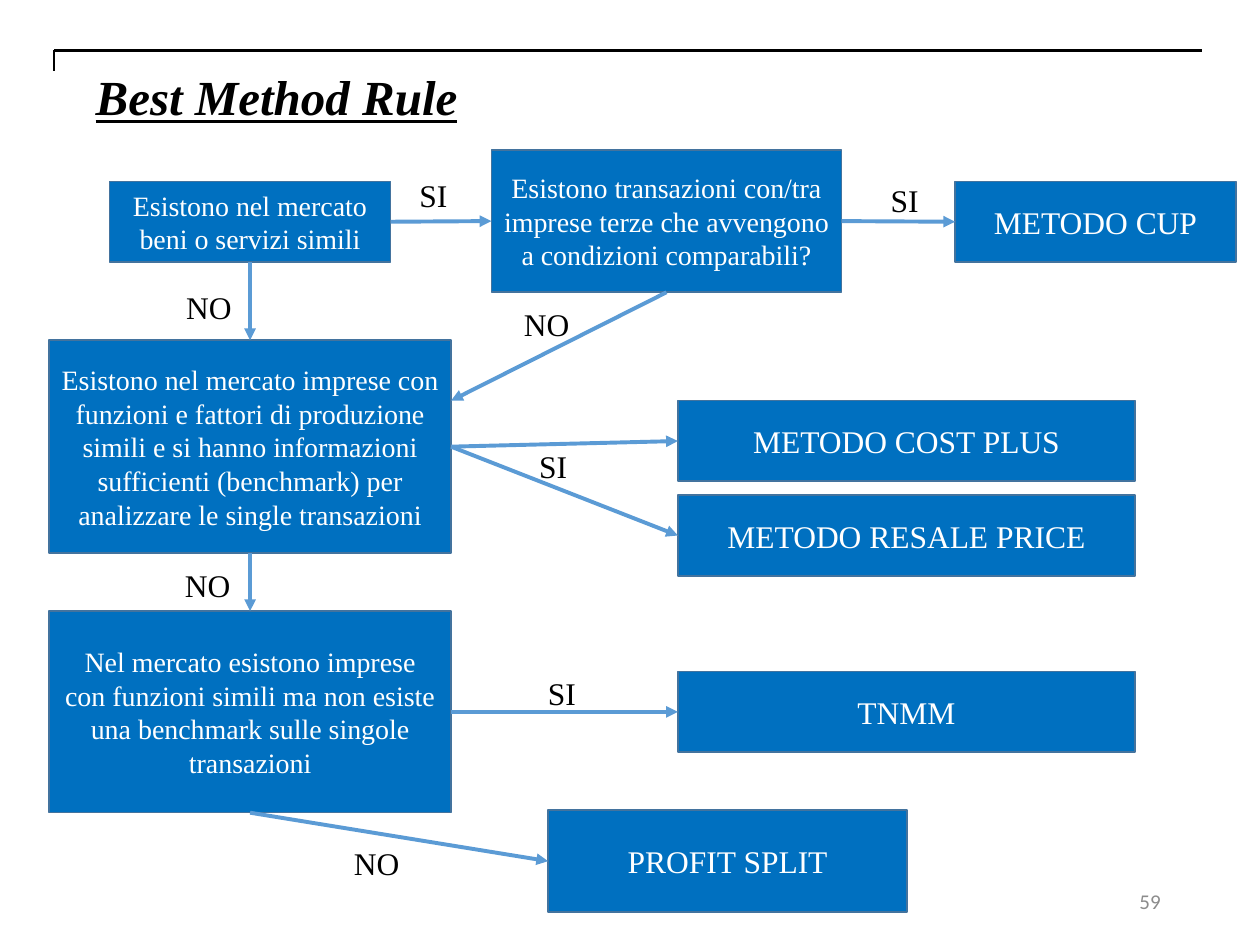
from pptx import Presentation
from pptx.dml.color import RGBColor
from pptx.enum.shapes import MSO_CONNECTOR as Connector, MSO_SHAPE as Shape
from pptx.enum.text import MSO_ANCHOR as Anchor, MSO_AUTO_SIZE as AutoSize, PP_ALIGN as Align
from pptx.oxml.ns import qn
from pptx.util import Inches, Pt
from lxml.etree import SubElement

BLACK = RGBColor(0x00, 0x00, 0x00)
WHITE = RGBColor(0xFF, 0xFF, 0xFF)
GREY = RGBColor(0x8C, 0x8C, 0x8C)
BOX_FILL = RGBColor(0x00, 0x70, 0xC0)
BOX_LINE = RGBColor(0x43, 0x73, 0x9E)
ARROW = RGBColor(0x5B, 0x9B, 0xD5)
COLUMNS, ROWS = 100, 75
TOP, LEFT, BOTTOM, RIGHT = range(4)


class FlowSlide:
    serif = "Times New Roman"

    def __init__(self, presentation):
        self.cell_width = presentation.slide_width / COLUMNS
        self.cell_height = presentation.slide_height / ROWS
        self.slide = presentation.slides.add_slide(presentation.slide_layouts[5])

    def place(self, column, row):
        return round(column * self.cell_width), round(row * self.cell_height)

    def area(self, column, row, width, height):
        return self.place(column, row) + self.place(width, height)

    def set_text(self, shape, text, size, color, align=Align.LEFT, anchor=Anchor.TOP,
                 **font_values):
        frame = shape.text_frame
        frame.text = text
        frame.word_wrap = True
        frame.vertical_anchor = anchor
        paragraph = frame.paragraphs[0]
        paragraph.alignment = align
        font = paragraph.runs[0].font
        font.color.rgb = color
        for name, value in {"name": self.serif, "size": Pt(size), **font_values}.items():
            setattr(font, name, value)

    def title(self, text, *cells):
        shape = self.slide.shapes.title
        shape.left, shape.top, shape.width, shape.height = self.area(*cells)
        self.set_text(shape, text, 28, BLACK, bold=True, italic=True, underline=True)
        shape.text_frame.auto_size = AutoSize.NONE

    def box(self, text, size, *cells):
        shape = self.slide.shapes.add_shape(Shape.RECTANGLE, *self.area(*cells))
        shape.shadow.inherit = False
        shape.fill.solid()
        shape.fill.fore_color.rgb = BOX_FILL
        shape.line.color.rgb = BOX_LINE
        shape.line.width = Pt(1)
        self.set_text(shape, text, size, WHITE, Align.CENTER, Anchor.MIDDLE)
        return shape

    def label(self, text, column, row, width=7.7, size=18, color=BLACK, **values):
        shape = self.slide.shapes.add_textbox(*self.area(column, row, width, 4))
        self.set_text(shape, text, size, color, **values)

    def line(self, start, end, color=BLACK, width=1.5):
        connector = self.slide.shapes.add_connector(
            Connector.STRAIGHT, *self.place(*start), *self.place(*end))
        connector.line.color.rgb = color
        connector.line.width = Pt(width)
        SubElement(connector.element.spPr, qn("a:effectLst"))
        return connector

    def arrow(self, source, source_side, target=None, target_side=None, end=(0, 0)):
        connector = self.line((0, 0), end, ARROW, 2.25)
        connector.begin_connect(source, source_side)
        if target is not None:
            connector.end_connect(target, target_side)
        outline = connector.element.spPr.find(qn("a:ln"))
        SubElement(outline, qn("a:tailEnd"), type="triangle")


def main():
    presentation = Presentation()
    presentation.slide_width, presentation.slide_height = Inches(10), Inches(7.5)
    flow = FlowSlide(presentation)
    flow.title("Best Method Rule", 6.6, 4.8, 88.8, 5.7)
    for end in ((95.4, 4), (4.3, 5.6)):
        flow.line((4.3, 4), end)

    goods = flow.box("Esistono nel mercato beni o servizi simili", 16, 8.7, 14.4, 22.3, 6.4)
    deals = flow.box("Esistono transazioni con/tra imprese terze che avvengono "
                     "a condizioni comparabili?", 16, 39, 11.9, 27.8, 11.3)
    firms = flow.box("Esistono nel mercato imprese con funzioni e fattori di produzione "
                     "simili e si hanno informazioni sufficienti (benchmark) per "
                     "analizzare le single transazioni", 16, 3.9, 27, 31.9, 16.9)
    similar = flow.box("Nel mercato esistono imprese con funzioni simili ma non esiste "
                       "una benchmark sulle singole transazioni", 16, 3.9, 48.5, 31.9, 16)
    cup = flow.box("METODO CUP", 18, 75.8, 14.4, 22.3, 6.4)
    split = flow.box("PROFIT SPLIT", 18, 43.5, 64.3, 28.5, 8.1)
    cost_plus, resale, tnmm = (
        flow.box(text, 18, 53.8, row, 36.3, 6.4)
        for text, row in (("METODO COST PLUS", 31.8), ("METODO RESALE PRICE", 39.3),
                          ("TNMM", 53.3)))

    for source, source_side, target, target_side in (
            (goods, BOTTOM, firms, TOP), (firms, BOTTOM, similar, TOP),
            (goods, RIGHT, deals, LEFT), (deals, RIGHT, cup, LEFT),
            (similar, BOTTOM, split, LEFT), (firms, RIGHT, cost_plus, LEFT),
            (firms, RIGHT, resale, LEFT), (similar, RIGHT, tnmm, LEFT)):
        flow.arrow(source, source_side, target, target_side)
    flow.arrow(deals, BOTTOM, end=(35.8, 31.8))

    answers = {
        "SI": ((32.3, 13.5), (69.7, 13.9), (41.8, 35), (42.5, 53)),
        "NO": ((40.6, 23.7), (13.8, 22.4), (13.7, 44.4), (27.1, 66.5)),
    }
    for answer, places in answers.items():
        for column, row in places:
            flow.label(answer, column, row)
    flow.label("59", 70.6, 69.5, 22.5, 12, GREY, align=Align.RIGHT,
               anchor=Anchor.MIDDLE, name="Calibri")
    presentation.save("out.pptx")


if __name__ == "__main__":
    main()
